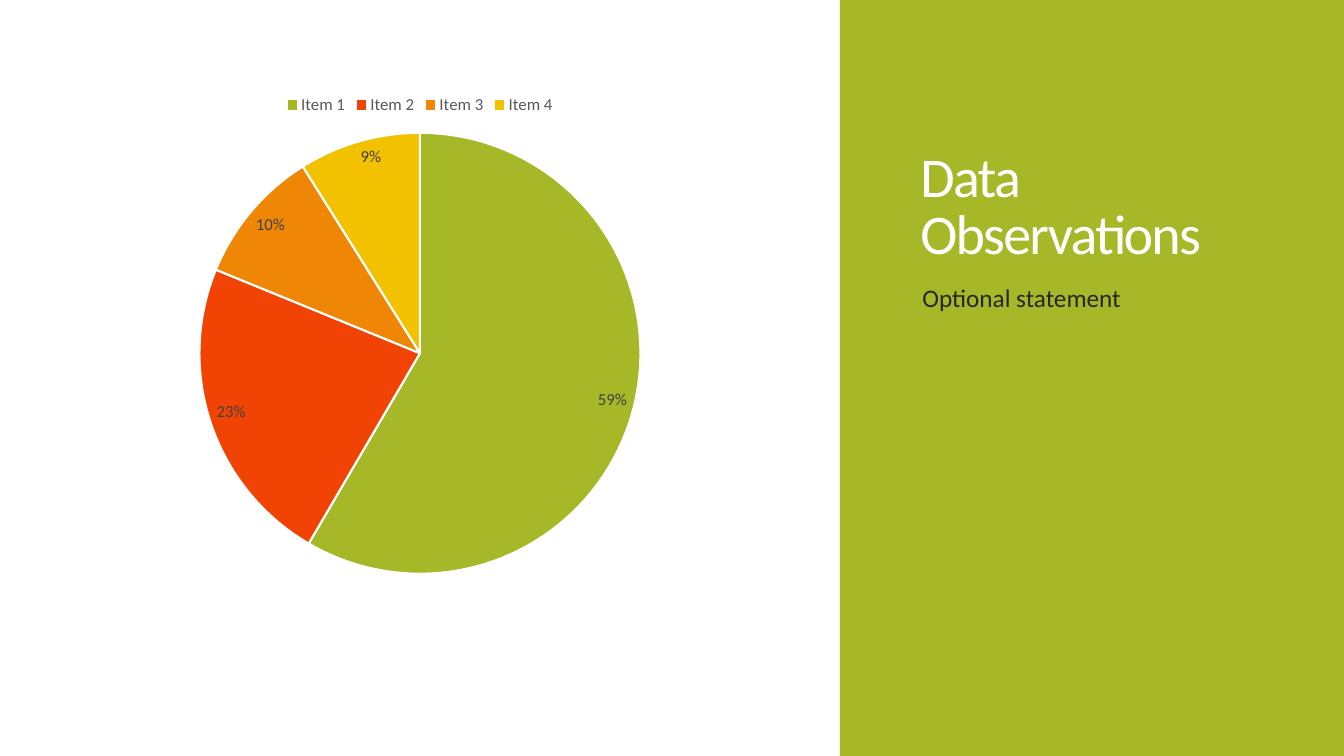
from pptx import Presentation
from pptx.chart.data import CategoryChartData
from pptx.dml.color import RGBColor
from pptx.enum.chart import XL_CHART_TYPE, XL_LABEL_POSITION, XL_LEGEND_POSITION
from pptx.enum.shapes import MSO_SHAPE
from pptx.enum.text import MSO_ANCHOR
from pptx.util import Inches, Pt

GREEN = RGBColor(0xA6, 0xB7, 0x27)
RED = RGBColor(0xF0, 0x43, 0x04)
ORANGE = RGBColor(0xEF, 0x86, 0x06)
YELLOW = RGBColor(0xF2, 0xC1, 0x00)
WHITE = RGBColor(0xFF, 0xFF, 0xFF)
INK = RGBColor(0x26, 0x26, 0x26)
LABEL_GREY = RGBColor(0x40, 0x40, 0x40)
LEGEND_GREY = RGBColor(0x59, 0x59, 0x59)

FONT = "Calibri"
SLIDE_WIDTH, SLIDE_HEIGHT = 13.33, 7.5
PANEL_WIDTH = 5
ITEMS = {"Item 1": (59, GREEN), "Item 2": (23, RED),
         "Item 3": (10, ORANGE), "Item 4": (9, YELLOW)}


def set_font(font, size, color):
    for name, value in {"name": FONT, "size": Pt(size), "bold": False}.items():
        setattr(font, name, value)
    font.color.rgb = color


def add_text(page, box, text, size, color, anchor, para_format, spacing=0):
    """Place one paragraph; spacing is the letter spacing in points."""
    frame = page.shapes.add_textbox(*map(Inches, box)).text_frame
    frame.word_wrap = True
    frame.vertical_anchor = anchor
    para = frame.paragraphs[0]
    para.text = text
    for name, value in para_format.items():
        setattr(para, name, value)
    for span in para.runs:
        set_font(span.font, size, color)
        if spacing:
            span.font._element.set("spc", str(round(spacing * 100)))


def add_pie(page, box):
    data = CategoryChartData()
    data.categories = list(ITEMS)
    data.add_series("Series 1", [value for value, _ in ITEMS.values()])
    chart = page.shapes.add_chart(XL_CHART_TYPE.PIE, *map(Inches, box), data).chart
    chart.has_title = False
    chart.font.name, chart.font.size = FONT, Pt(10)

    chart.has_legend = True
    chart.legend.position = XL_LEGEND_POSITION.TOP
    chart.legend.include_in_layout = False
    set_font(chart.legend.font, 12, LEGEND_GREY)

    plot = chart.plots[0]
    plot.vary_by_categories = True
    for index, (_, color) in enumerate(ITEMS.values()):
        slice_format = plot.series[0].points[index].format
        slice_format.fill.solid()
        slice_format.fill.fore_color.rgb = color
        slice_format.line.color.rgb = WHITE
        slice_format.line.width = Pt(1.5)

    labels = plot.series[0].data_labels
    label_format = {"show_value": True, "number_format": '0"%"',
                    "number_format_is_linked": False,
                    "position": XL_LABEL_POSITION.INSIDE_END}
    for name, value in label_format.items():
        setattr(labels, name, value)
    set_font(labels.font, 12, LABEL_GREY)


def add_side_panel(page, left, top, width, height):
    panel = page.shapes.add_shape(
        MSO_SHAPE.RECTANGLE, *map(Inches, (left, top, width, height)))
    panel.shadow.inherit = False
    panel.fill.solid()
    panel.fill.fore_color.rgb = GREEN
    panel.line.fill.background()
    add_text(page, (left + 0.7, top + 0.59, 3.7, 2.1), "Data\vObservations",
             40, WHITE, MSO_ANCHOR.BOTTOM, {"line_spacing": 0.85}, -1.2)
    add_text(page, (left + 0.72, top + 2.75, 3.72, 3.42), "Optional statement",
             18, INK, MSO_ANCHOR.TOP, {"space_before": Pt(12)})


def main():
    deck = Presentation()
    deck.slide_width, deck.slide_height = Inches(SLIDE_WIDTH), Inches(SLIDE_HEIGHT)
    page = deck.slides.add_slide(deck.slide_layouts[6])
    add_side_panel(page, SLIDE_WIDTH - PANEL_WIDTH, 0, PANEL_WIDTH, SLIDE_HEIGHT)
    add_pie(page, (0.83, 0.83, 6.67, 5))
    deck.save("out.pptx")


if __name__ == "__main__":
    main()
